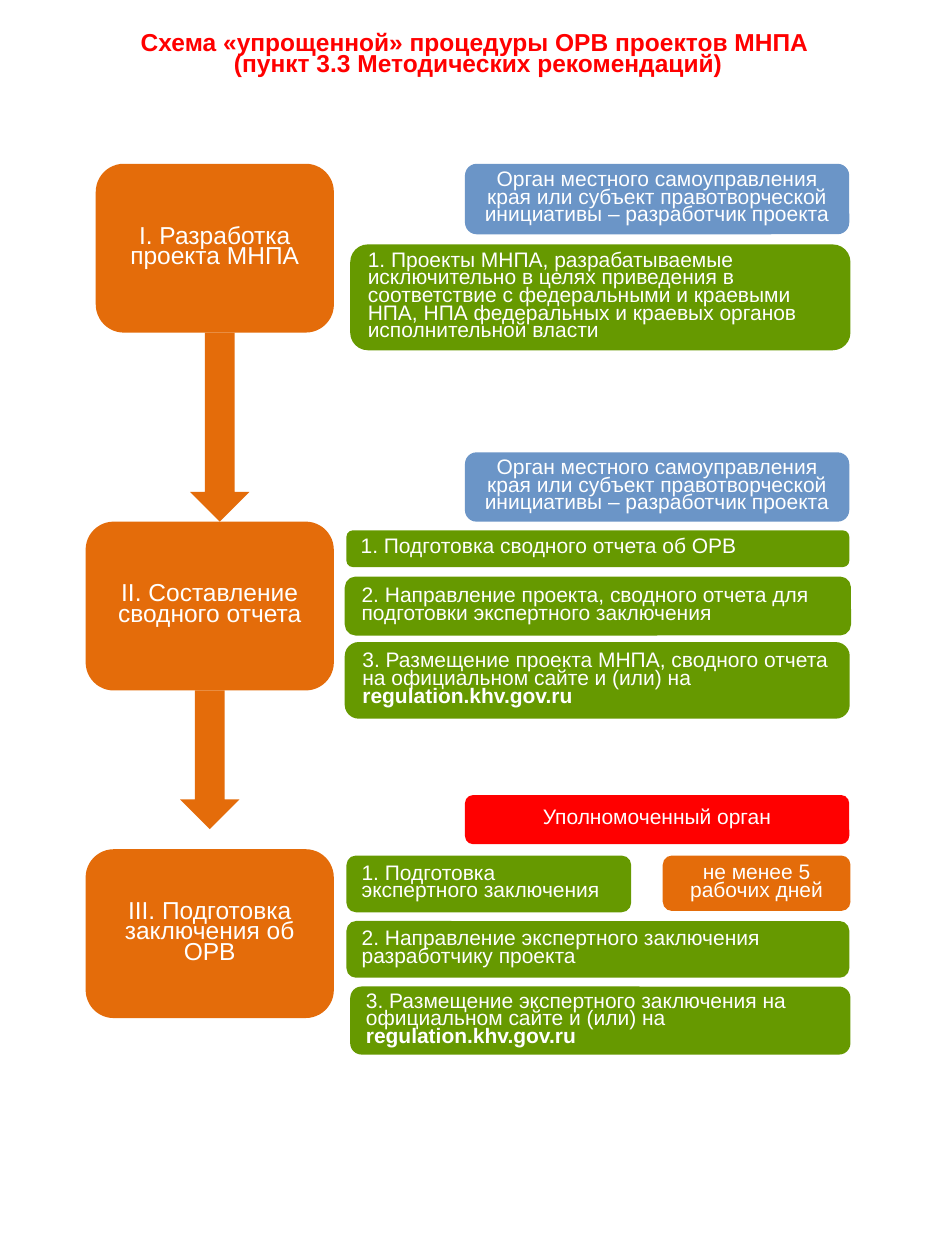
from dataclasses import dataclass
from typing import Optional

from pptx import Presentation
from pptx.dml.color import RGBColor
from pptx.enum.shapes import MSO_SHAPE
from pptx.enum.text import MSO_ANCHOR, MSO_AUTO_SIZE, PP_ALIGN
from pptx.util import Inches, Pt

ROUNDED = MSO_SHAPE.ROUNDED_RECTANGLE
ARROW = MSO_SHAPE.DOWN_ARROW
MIDDLE = MSO_ANCHOR.MIDDLE
GROW = MSO_AUTO_SIZE.SHAPE_TO_FIT_TEXT
CENTER, LEFT = PP_ALIGN.CENTER, PP_ALIGN.LEFT

COLORS = {
    "stage": "E46C0A",
    "developer": "6B95C7",
    "authority": "FF0000",
    "step": "669900",
    "title": "FF0000",
    "text": "FFFFFF",
}
COLUMNS, ROWS = 75, 100
WIDTH, HEIGHT = Inches(7.5), Inches(10)
LINE_SPACING = 0.7

STAGE_HEIGHT = 13.4
ACTOR_COLUMN, ACTOR_WIDTH = 36.9, 30.5
STEP_COLUMN, STEP_WIDTH = 27.5, 39.9
INDENTED_COLUMN, INDENTED_WIDTH = 27.8, 39.7
ARROW_WIDTH = 4.7

DEVELOPER = (
    "Орган местного самоуправления края или субъект правотворческой "
    "инициативы – разработчик проекта"
)
SITE = "regulation.khv.gov.ru"


@dataclass(frozen=True)
class Area:
    column: float
    row: float
    columns: float
    rows: float

    def lengths(self) -> tuple[int, int, int, int]:
        return (
            round(WIDTH * self.column / COLUMNS),
            round(HEIGHT * self.row / ROWS),
            round(WIDTH * self.columns / COLUMNS),
            round(HEIGHT * self.rows / ROWS),
        )


@dataclass(frozen=True)
class Block:
    area: Area
    color: str
    text: str = ""
    bold_text: str = ""
    size: int = 12
    align: PP_ALIGN = CENTER
    outline: Optional[int] = None
    preset: MSO_SHAPE = ROUNDED


def stage(column: float, row: float, columns: float, text: str) -> Block:
    return Block(Area(column, row, columns, STAGE_HEIGHT), "stage", text, size=14)


def actor(row: float, rows: float, color: str, text: str) -> Block:
    return Block(Area(ACTOR_COLUMN, row, ACTOR_WIDTH, rows), color, text)


def step(row: float, rows: float, text: str, bold_text: str = "",
         column: float = STEP_COLUMN, columns: float = STEP_WIDTH,
         outline: Optional[int] = None) -> Block:
    return Block(Area(column, row, columns, rows), "step", text, bold_text,
                 align=LEFT, outline=outline)


def arrow(column: float, row: float, rows: float) -> Block:
    return Block(Area(column, row, ARROW_WIDTH, rows), "stage", preset=ARROW)


BLOCKS = [
    stage(7.6, 13, 18.9, "I. Разработка проекта МНПА"),
    stage(6.8, 41.4, 19.7, "II. Составление сводного отчета"),
    stage(6.8, 67.4, 19.7, "III. Подготовка заключения об ОРВ"),
    arrow(15.1, 26.4, 15),
    arrow(14.3, 54.8, 11),
    actor(13, 5.6, "developer", DEVELOPER),
    actor(35.9, 5.5, "developer", DEVELOPER),
    actor(63.1, 3.9, "authority", "Уполномоченный орган"),
    Block(Area(52.6, 67.9, 14.9, 4.4), "stage", "не менее 5 рабочих дней"),
    step(19.4, 8.4,
         "1. Проекты МНПА, разрабатываемые исключительно в целях приведения "
         "в соответствие с федеральными и краевыми НПА, НПА федеральных "
         "и краевых органов исполнительной власти",
         column=INDENTED_COLUMN, columns=INDENTED_WIDTH),
    step(42.1, 2.9, "1. Подготовка сводного отчета об ОРВ"),
    step(45.9, 4.4,
         "2. Направление проекта, сводного отчета для подготовки "
         "экспертного заключения", outline=2),
    step(51.1, 5.8,
         "3. Размещение проекта МНПА, сводного отчета на официальном сайте "
         "и (или) на ", SITE, columns=39.8, outline=2),
    step(67.9, 4.5, "1. Подготовка экспертного заключения", columns=22.6),
    step(73.1, 4.5, "2. Направление экспертного заключения разработчику проекта"),
    step(78.3, 5.4,
         "3. Размещение экспертного заключения на официальном сайте "
         "и (или) на ", SITE, column=INDENTED_COLUMN, columns=INDENTED_WIDTH),
]
TITLE_AREA = Area(3.7, 2.3, 68.5, 4.3)
TITLE_LINES = [
    "Схема «упрощенной» процедуры ОРВ проектов МНПА ",
    "(пункт 3.3 Методических рекомендаций)",
]


def color_of(name: str) -> RGBColor:
    return RGBColor.from_string(COLORS[name])


def add_span(para, text: str, size: int, color: str, bold: bool) -> None:
    span = para.add_run()
    span.text = text
    for name, value in {"name": "Arial", "size": Pt(size), "bold": bold}.items():
        setattr(span.font, name, value)
    span.font.color.rgb = color_of(color)


def format_para(para, align: PP_ALIGN) -> None:
    for name, value in {"alignment": align, "line_spacing": LINE_SPACING}.items():
        setattr(para, name, value)


def draw_title(page) -> None:
    box = page.shapes.add_textbox(*TITLE_AREA.lengths())
    frame = box.text_frame
    for name, value in {"word_wrap": True, "auto_size": GROW}.items():
        setattr(frame, name, value)
    for index, line in enumerate(TITLE_LINES):
        para = frame.add_paragraph() if index else frame.paragraphs[0]
        format_para(para, CENTER)
        add_span(para, line, 14, "title", True)


def draw_block(page, block: Block) -> None:
    box = page.shapes.add_shape(block.preset, *block.area.lengths())
    box.shadow.inherit = False
    box.fill.solid()
    box.fill.fore_color.rgb = color_of(block.color)
    if block.outline:
        box.line.color.rgb = color_of(block.color)
        box.line.width = Pt(block.outline)
    else:
        box.line.fill.background()
    if not block.text:
        return
    frame = box.text_frame
    for name, value in {"word_wrap": True, "vertical_anchor": MIDDLE}.items():
        setattr(frame, name, value)
    para = frame.paragraphs[0]
    format_para(para, block.align)
    add_span(para, block.text, block.size, "text", False)
    if block.bold_text:
        add_span(para, block.bold_text, block.size, "text", True)


def main() -> None:
    deck = Presentation()
    deck.slide_width, deck.slide_height = WIDTH, HEIGHT
    page = deck.slides.add_slide(deck.slide_layouts[6])
    draw_title(page)
    for block in BLOCKS:
        draw_block(page, block)
    deck.save("out.pptx")


if __name__ == "__main__":
    main()
